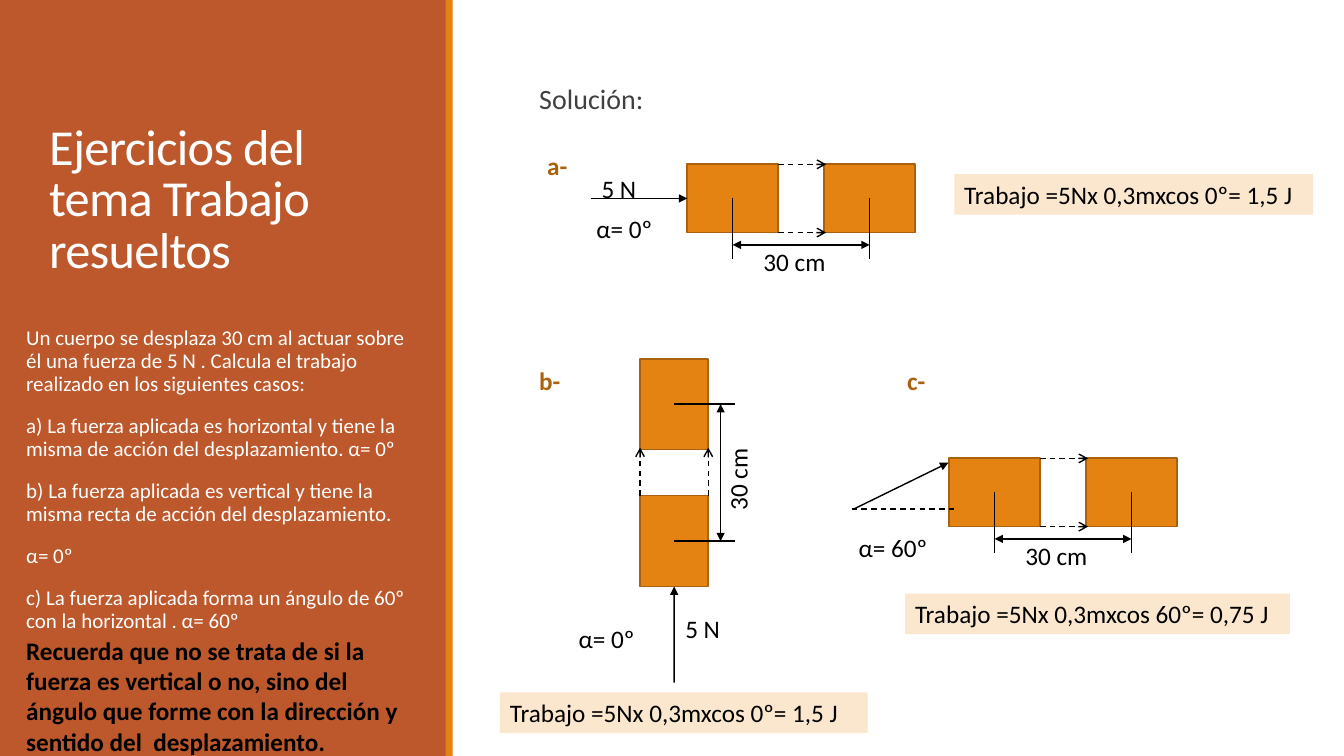
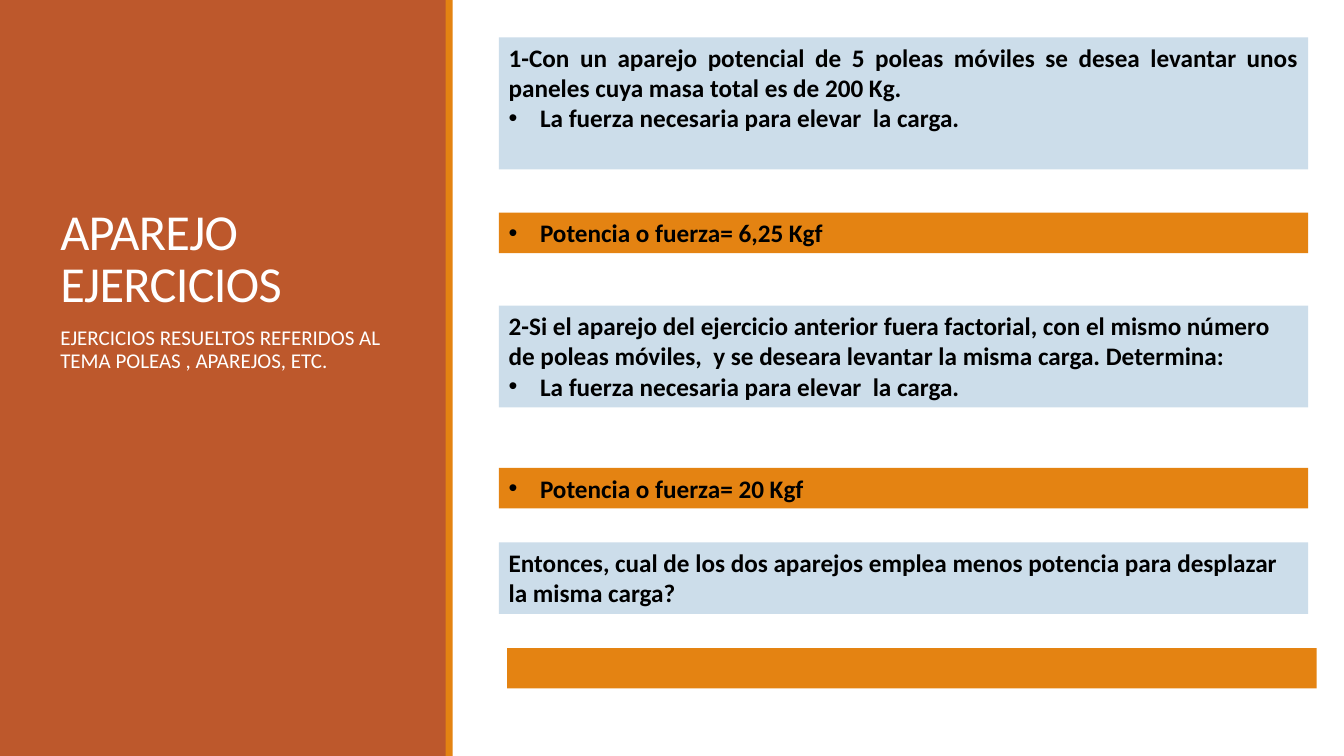
from lxml import etree
from pptx import Presentation
from pptx.dml.color import RGBColor
from pptx.enum import dml, shapes, text
from pptx.oxml.ns import qn
from pptx.util import Cm, Pt

HUE = {
    "panel": "BD582C", "orange": "E48312", "edge": "A9610D", "mark": "AB620D",
    "cream": "FBE6CE", "blue": "CCDDEA", "gray": "404040",
    "white": "FFFFFF", "black": "000000",
}
FONT = "Calibri"
ROW = 1.02                       # height of a one-line text
BOX_W, BOX_H, STEP = 2.29, 1.72, 3.45
MID_X, MID_Y = BOX_W / 2, BOX_H / 2


def rgb(name):
    return RGBColor.from_string(HUE[name])


def rect(slide, x, y, w, h, fill, edge=None):
    box = slide.shapes.add_shape(
        shapes.MSO_SHAPE.RECTANGLE, Cm(x), Cm(y), Cm(w), Cm(h))
    box.shadow.inherit = False
    box.fill.solid()
    box.fill.fore_color.rgb = rgb(fill)
    if edge:
        box.line.color.rgb = rgb(edge)
        box.line.width = Pt(1.25)
    else:
        box.line.fill.background()
    return box


def bullet(para):
    props = para._p.get_or_add_pPr()
    props.set("marL", str(Cm(0.79)))
    props.set("indent", str(-Cm(0.79)))
    etree.SubElement(props, qn("a:buFont")).set("typeface", "Arial")
    etree.SubElement(props, qn("a:buChar")).set("char", "•")


def write(slide, x, y, w, h, lines, size=18, hue="black", bold=False,
          fill=None, dots=(), just=False, lead=None, gap=False, track=0,
          low=False):
    """Text box; dots holds the indexes of bulleted lines, track is in points."""
    box = slide.shapes.add_textbox(Cm(x), Cm(y), Cm(w), Cm(h))
    if fill:
        box.fill.solid()
        box.fill.fore_color.rgb = rgb(fill)
    frame = box.text_frame
    frame.word_wrap = True
    if low:
        frame.vertical_anchor = text.MSO_ANCHOR.BOTTOM
    for i, line in enumerate(lines):
        para = frame.paragraphs[0] if i == 0 else frame.add_paragraph()
        para.text = line
        if lead:
            para.line_spacing = lead
        if gap:
            para.space_before, para.space_after = Pt(12), Pt(2)
        if just:
            para.alignment = text.PP_ALIGN.JUSTIFY
        if i in dots:
            bullet(para)
        font = para.font
        font.name, font.size, font.bold = FONT, Pt(size), bold
        font.color.rgb = rgb(hue)
        if track:
            font._rPr.set("spc", str(int(track * 100)))
    return box


def link(slide, start, end, head=None, tail=None, dash=False):
    """Straight line with optional arrowheads at its start and end."""
    line = slide.shapes.add_connector(
        shapes.MSO_CONNECTOR.STRAIGHT, *(Cm(v) for v in (*start, *end)))
    line.line.color.rgb = rgb("black")
    line.line.width = Pt(1)
    if dash:
        line.line.dash_style = dml.MSO_LINE.DASH
    ln = line.line._get_or_add_ln()
    for tag, kind in (("a:headEnd", head), ("a:tailEnd", tail)):
        if kind:
            etree.SubElement(ln, qn(tag)).set("type", kind)
    etree.SubElement(line._element.spPr, qn("a:effectLst"))
    return line


def move(slide, x, y, up=False, push=False):
    """Body shifted 30 cm to the right, or upwards; push adds a force in line."""
    def at(along, side):
        return (x + side, y - along) if up else (x + along, y + side)

    bodies = []
    for start in (0, STEP):
        if up:
            place = (x, y - start - BOX_W, BOX_H, BOX_W)
        else:
            place = (x + start, y, BOX_W, BOX_H)
        bodies.append(rect(slide, *place, "orange", "edge"))
    for side in (0, BOX_H):
        link(slide, at(BOX_W, side), at(3.5, side), tail="arrow", dash=True)
    for mid in (MID_X, MID_X + STEP):
        link(slide, at(mid, MID_Y), at(mid, 2.39))
    link(slide, at(MID_X, 2.03), at(MID_X + STEP, 2.03),
         head="triangle", tail="triangle")
    cx, cy = at(3.12, 2.46)
    label = write(slide, cx - 1.45, cy - ROW / 2, 2.9, ROW, ["30 cm"])
    if up:
        label.rotation = 270
    if push:
        force = link(slide, at(-2.42, MID_Y), at(0, MID_Y), tail="triangle")
        force.end_connect(bodies[0], 2 if up else 1)


def page(deck, title, x, y):
    slide = deck.slides.add_slide(deck.slide_layouts[6])
    rect(slide, 0, 0, 11.25, 19.05, "panel")
    rect(slide, 11.23, 0, 0.18, 19.05, "orange")
    write(slide, x, y, 8.89, 6.35, [title], 36, "white",
          lead=0.85, track=-0.5, low=True)
    return slide


def side(slide, x, w, h, lines):
    write(slide, x, 8.13, w, h, lines, 15, "white", lead=0.9, gap=True)


def work(deck):
    slide = page(deck, "Ejercicios del tema Trabajo resueltos", 0.99, 0.79)
    side(slide, 0.41, 10.16, 8.23, [
        "Un cuerpo se desplaza 30 cm al actuar sobre él una fuerza de 5 N . "
        "Calcula el trabajo realizado en los siguientes casos:",
        "a) La fuerza aplicada es horizontal y tiene la misma de acción del "
        "desplazamiento. α= 0º",
        "b) La fuerza aplicada es vertical y tiene la misma recta de acción "
        "del desplazamiento.",
        "α= 0º",
        "c) La fuerza aplicada forma un ángulo de 60º con la horizontal . "
        "α= 60º",
    ])
    write(slide, 0.41, 15.88, 9.98, 3.33, [
        "Recuerda que no se trata de si la fuerza es vertical o no, sino del "
        "ángulo que forme con la dirección y sentido del  desplazamiento."],
        bold=True)
    write(slide, 13.34, 2.03, 18.03, 1.04, ["Solución:"], 20, "gray",
          lead=0.9, gap=True)

    move(slide, 17.32, 4.14, push=True)
    move(slide, 16.13, 14.78, up=True, push=True)
    move(slide, 23.92, 11.55)
    link(slide, (21.51, 12.83), (23.9, 11.66), tail="triangle")
    link(slide, (21.46, 12.83), (24.05, 12.83), dash=True)

    for x, y, mark in ((13.54, 3.66, "a-"), (13.34, 9.07, "b-"),
                       (22.61, 9.07, "c-")):
        write(slide, x, y, 1.5, ROW, [mark], hue="mark", bold=True)
    for x, y, note in ((14.91, 4.24, "5 N"), (17.02, 15.32, "5 N"),
                       (14.78, 5.26, "α= 0º"), (14.33, 15.57, "α= 0º"),
                       (21.39, 13.28, "α= 60º")):
        write(slide, x, y, 2.8, ROW, [note])
    for x, y, w, sum_ in ((24.05, 4.39, 9.04, "0º= 1,5 J"),
                          (12.6, 17.45, 9.27, "0º= 1,5 J"),
                          (22.81, 14.96, 9.7, "60º= 0,75 J")):
        write(slide, x, y, w, ROW, ["Trabajo =5Nx 0,3mxcos " + sum_],
              fill="cream")


def hoist(deck):
    slide = page(deck, "APAREJO EJERCICIOS", 1.27, 1.65)
    side(slide, 1.27, 8.89, 9.4, [
        "EJERCICIOS RESUELTOS REFERIDOS AL TEMA POLEAS , APAREJOS, ETC."])
    left, wide = 12.57, 20.4
    load = "La fuerza necesaria para elevar  la carga."
    asks = (
        (0.94, 3.33, True, [
            "1-Con un aparejo potencial de 5 poleas móviles se desea levantar "
            "unos paneles cuya masa total es de 200 Kg.", load]),
        (7.7, 2.57, False, [
            "2-Si el aparejo del ejercicio anterior fuera factorial, con el "
            "mismo número de poleas móviles,  y se deseara levantar la misma "
            "carga. Determina:", load]),
        (13.67, 1.8, False, [
            "Entonces, cual de los dos aparejos emplea menos potencia para "
            "desplazar la misma carga?"]),
    )
    for y, h, just, lines in asks:
        write(slide, left, y, wide, h, lines, bold=True, fill="blue",
              dots=(1,), just=just)
    for y, force in ((5.36, "6,25"), (11.79, "20")):
        write(slide, left, y, wide, ROW, [f"Potencia o fuerza= {force} Kgf"],
              bold=True, fill="orange", dots=(0,))
    rect(slide, 12.78, 16.33, wide, ROW, "orange")


def main():
    deck = Presentation()
    deck.slide_width, deck.slide_height = Cm(33.87), Cm(19.05)
    work(deck)
    hoist(deck)
    deck.save("out.pptx")


if __name__ == "__main__":
    main()
